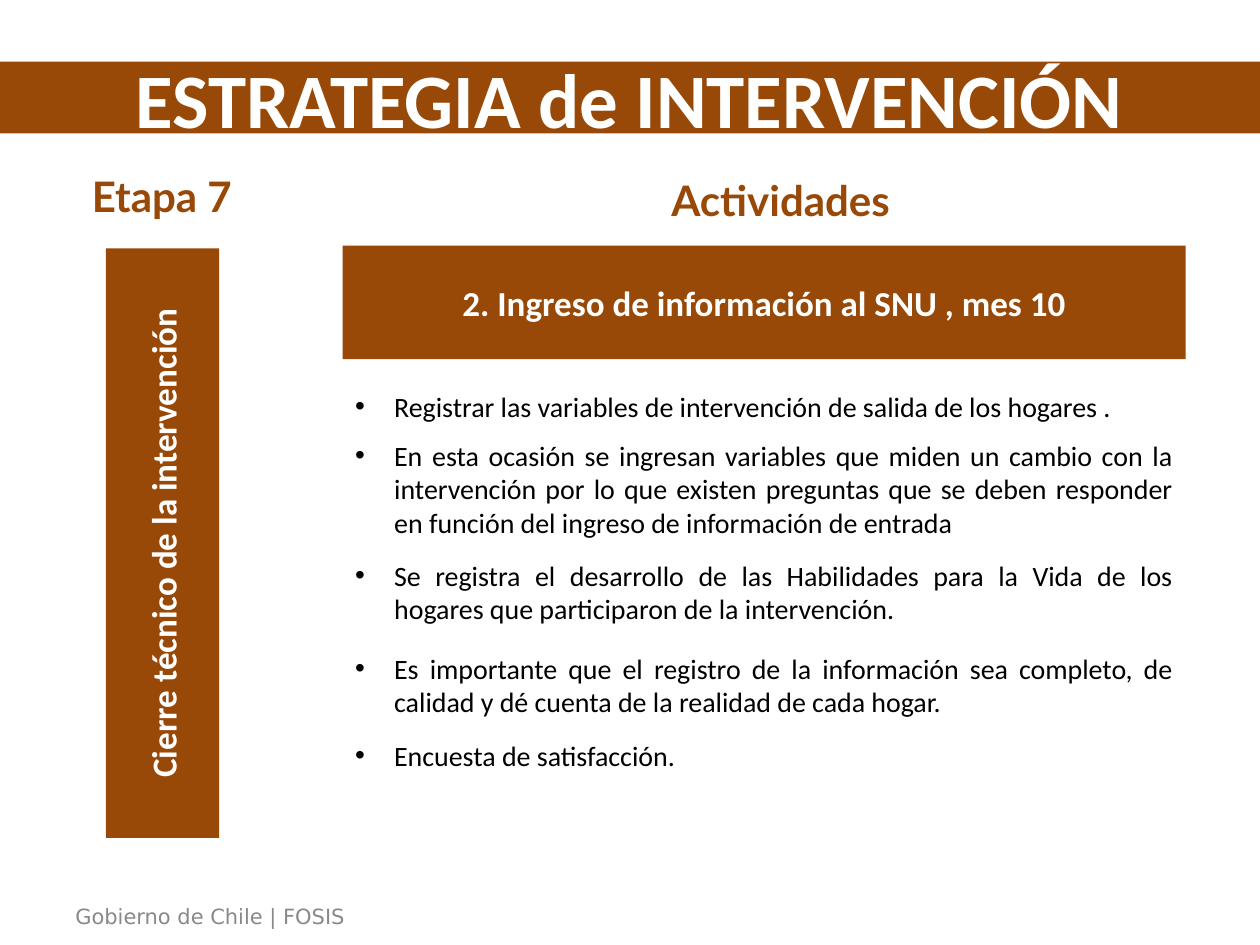
from pptx import Presentation
from pptx.util import Inches, Pt
from pptx.dml.color import RGBColor as Rgb
from pptx.enum.shapes import MSO_SHAPE as Shape
from pptx.enum.text import PP_ALIGN as Align, MSO_ANCHOR as Anchor, MSO_AUTO_SIZE as Auto
from pptx.oxml.xmlchemy import OxmlElement as Element

# Content; places are percent of slide width and height
COLORS = {"brown": "984807", "white": "FFFFFF", "black": "000000", "gray": "898989"}
FOOTER = ("Gobierno de Chile | FOSIS", (5, 94.93, 24.3, 4))
BARS = [  # text, place, size, turn
    ("ESTRATEGIA de INTERVENCIÓN", (0, 6.53, 100, 7.6), 44, 0),
    ("Cierre técnico de la intervención", (-10.5, 51.47, 46.8, 12), 20, 270),
    ("2. Ingreso de información al SNU , mes 10", (27.2, 26, 66.9, 12), 20, 0),
]
HEADS = [
    ("Etapa 7", (2.8, 17.87, 20.1, 5.73)),
    ("Actividades", (28.5, 18.27, 66.9, 5.73)),
]
TASKS = [  # top, lines, text
    (40.53, 1, "Registrar las variables de intervención de salida de los hogares ."),
    (45.73, 3, "En esta ocasión se ingresan variables que miden un cambio con la "
               "intervención por lo que existen preguntas que se deben responder "
               "en función del ingreso de información de entrada"),
    (58.4, 2, "Se registra el desarrollo de las Habilidades para la Vida de los "
              "hogares que participaron de la intervención. "),
    (68.27, 2, "Es importante que el registro de la información sea completo, de "
               "calidad y dé cuenta de la realidad de cada hogar."),
    (77.47, 1, "Encuesta de satisfacción."),
]
COL, WIDE = 27.2, 66.9   # activity column
PAD, LINE = 1.33, 3.6    # box padding and line height
INDENT = Inches(0.31)
SIDES = ("margin_left", "margin_top", "margin_right", "margin_bottom")

deck = Presentation()
deck.slide_width, deck.slide_height = Inches(10), Inches(7.5)
slide = deck.slides.add_slide(deck.slide_layouts[6])


def place(box):
    x, y, w, h = box
    across, down = deck.slide_width / 100, deck.slide_height / 100
    return [round(v) for v in (x * across, y * down, w * across, h * down)]


def write(shape, text, color, align, font, frame):
    body = shape.text_frame
    for key, val in frame.items():
        setattr(body, key, val)
    para = body.paragraphs[0]
    para.alignment = align
    run = para.add_run()
    run.text = text
    for key, val in font.items():
        setattr(run.font, key, val)
    run.font.color.rgb = Rgb.from_string(COLORS[color])
    return para


def bullet(para):
    props = para._p.get_or_add_pPr()
    props.set("marL", str(INDENT))
    props.set("indent", str(-INDENT))
    for tag, key, val in (("a:buFont", "typeface", "Arial"), ("a:buChar", "char", "•")):
        mark = Element(tag)
        mark.set(key, val)
        props.append(mark)


mid = {"word_wrap": True, "vertical_anchor": Anchor.MIDDLE}
mid.update({side: Inches(0.1) for side in SIDES})
grow = {"word_wrap": True, "auto_size": Auto.SHAPE_TO_FIT_TEXT}

# Footer
text, box = FOOTER
write(slide.shapes.add_textbox(*place(box)), text, "gray", Align.LEFT,
      {"name": "DejaVu Sans", "size": Pt(12)}, {**grow, "word_wrap": False})

# Brown bars
for text, box, size, turn in BARS:
    bar = slide.shapes.add_shape(Shape.RECTANGLE, *place(box))
    bar.shadow.inherit = False
    bar.fill.solid()
    bar.fill.fore_color.rgb = Rgb.from_string(COLORS["brown"])
    bar.line.fill.background()
    bar.rotation = turn
    write(bar, text, "white", Align.CENTER,
          {"name": "Calibri", "size": Pt(size), "bold": True}, mid)

# Column heads
for text, box in HEADS:
    write(slide.shapes.add_textbox(*place(box)), text, "brown", Align.CENTER,
          {"name": "Lato", "size": Pt(24), "bold": True}, mid)

# Activities
for top, lines, text in TASKS:
    area = slide.shapes.add_textbox(*place((COL, top, WIDE, PAD + LINE * lines)))
    bullet(write(area, text, "black", Align.JUSTIFY,
                 {"name": "Calibri", "size": Pt(16)}, grow))

deck.save("out.pptx")
